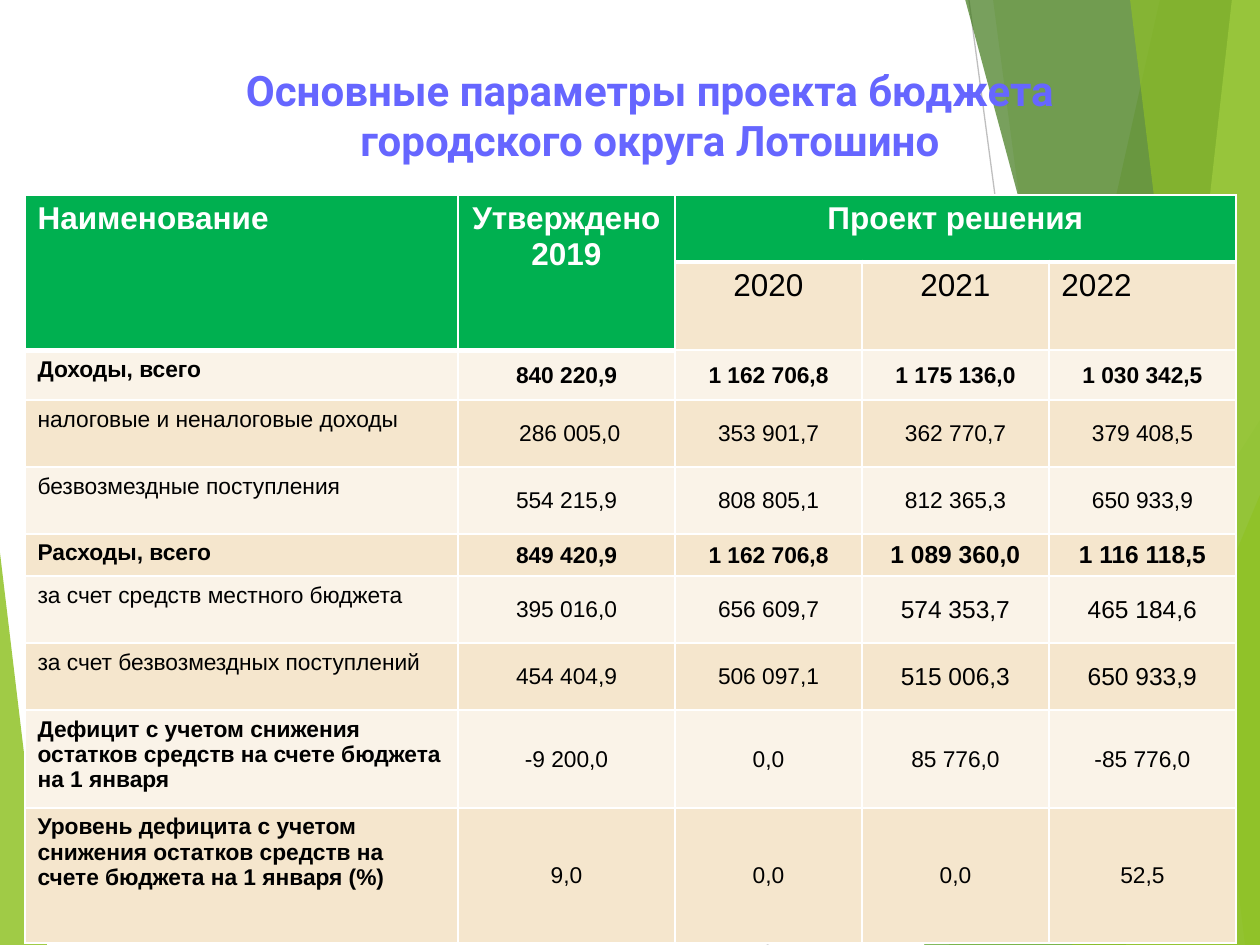
from collections import namedtuple
from dataclasses import dataclass

from lxml import etree
from pptx import Presentation
from pptx import util as u
from pptx.dml import color
from pptx.enum import shapes, text
from pptx.oxml import ns

PX = u.Inches(1) / 126
Box = namedtuple("Box", "left top width height")


@dataclass(frozen=True)
class Theme:
    title: str = "6666FF"
    header: str = "00B050"
    band_dark: str = "F5E6CD"
    band_light: str = "FAF3E8"
    white: str = "FFFFFF"
    black: str = "000000"
    lime: str = "90C226"
    green: str = "54A021"
    forest: str = "3F7819"
    pale: str = "C0E474"
    title_font: str = "Roboto"
    body_font: str = "Arial"
    title_size: int = 24
    header_size: int = 18
    body_size: int = 13
    large_size: int = 14


THEME = Theme()

BUDGET = [
    ("Доходы, всего", "840 220,9", "1 162 706,8", "1 175 136,0", "1 030 342,5"),
    ("налоговые и неналоговые доходы", " 286 005,0", "353 901,7", "362 770,7", "379 408,5"),
    ("безвозмездные поступления", "554 215,9", "808 805,1", "812 365,3", "650 933,9"),
    ("Расходы, всего", "849 420,9", "1 162 706,8", "1 089 360,0", "1 116 118,5"),
    ("за счет средств местного бюджета", "395 016,0", "656 609,7", "574 353,7", "465 184,6"),
    ("за счет безвозмездных поступлений", "454 404,9", "506 097,1", "515 006,3", "650 933,9"),
    ("Дефицит с учетом снижения остатков средств на счете бюджета на 1 января",
     "-9 200,0", "0,0", "85 776,0", "-85 776,0"),
    ("Уровень дефицита с учетом снижения остатков средств на счете бюджета на 1 января (%)",
     "9,0", "0,0", "0,0", "52,5"),
]
TOTAL_ROWS = {0, 3}
BOLD_LABEL_ROWS = TOTAL_ROWS | {6, 7}
EXPENSE_ROWS = {3, 4, 5}
COLUMN_WIDTHS = [433, 217, 187, 187, 187]
ROW_HEIGHTS = [67, 83, 50, 67, 67, 41, 67, 67, 98, 135]


def px(value):
    return u.Emu(round(value * PX))


def rgb(value):
    return color.RGBColor.from_string(value)


def paint(shape, fill, opacity):
    shape.shadow.inherit = False
    shape.line.fill.background()
    shape.fill.solid()
    shape.fill.fore_color.rgb = rgb(fill)
    tint = shape.fill._xPr.find(".//" + ns.qn("a:srgbClr"))
    etree.SubElement(tint, ns.qn("a:alpha"), val=str(opacity * 1000))


def add_facet(page, box, top_left, bottom_left, fill, opacity):
    right, bottom = box.left + box.width, box.top + box.height
    builder = page.shapes.build_freeform(box.left + top_left, box.top - 1, scale=PX)
    builder.add_line_segments(
        [(right, box.top - 1), (right, bottom), (box.left + bottom_left, bottom)])
    paint(builder.convert_to_shape(), fill, opacity)


def add_triangle(page, box, left, top, width, apex, fill, opacity):
    shape = page.shapes.add_shape(
        shapes.MSO_SHAPE.ISOSCELES_TRIANGLE, px(box.left + left), px(box.top + top),
        px(width), px(box.height - top))
    shape.adjustments[0] = apex
    paint(shape, fill, opacity)


def add_hairline(page, box, start, end, shade):
    line = page.shapes.add_connector(
        shapes.MSO_CONNECTOR.STRAIGHT, px(box.left + start[0]), px(box.top + start[1]),
        px(box.left + end[0]), px(box.top + end[1]))
    line.line.color.rgb = rgb(shade)
    line.line.width = u.Pt(0.75)
    etree.SubElement(line._element.spPr, ns.qn("a:effectLst"))


def add_backdrop(page, box):
    add_hairline(page, box, (969, 0), (1095, 945), "BFBFBF")
    add_hairline(page, box, (1260, 508), (767, 945), "D9D9D9")
    add_facet(page, box, 1160, 949, THEME.lime, 30)
    add_facet(page, box, 993, 1118, THEME.lime, 20)
    add_triangle(page, box, 924, 420, 336, 1, THEME.green, 72)
    add_facet(page, box, 965, 1220, THEME.forest, 70)
    add_facet(page, box, 1232, 1126, THEME.pale, 70)
    add_facet(page, box, 1130, 1245, THEME.lime, 65)
    add_triangle(page, box, 1072, 495, 188, 1, THEME.lime, 80)
    add_triangle(page, box, 0, 553, 47, 0, THEME.lime, 85)


def style(para, font, size, shade, bold, centred):
    para.font.name = font
    para.font.size = u.Pt(size)
    para.font.color.rgb = rgb(shade)
    para.font.bold = bold
    para.alignment = text.PP_ALIGN.CENTER if centred else text.PP_ALIGN.LEFT


def add_title(page, box):
    frame = page.shapes.add_textbox(*map(px, box)).text_frame
    frame.word_wrap = True
    frame.vertical_anchor = text.MSO_ANCHOR.MIDDLE
    para = frame.paragraphs[0]
    para.text = "Основные параметры проекта бюджета городского округа Лотошино"
    style(para, THEME.title_font, THEME.title_size, THEME.title, True, True)


def set_borders(cell, top, bottom):
    props = cell._tc.get_or_add_tcPr()
    edges = (("L", 1), ("R", 1), ("T", top), ("B", bottom))
    for index, (side, width) in enumerate(edges):
        edge = etree.Element(ns.qn(f"a:ln{side}"), w=str(u.Pt(width)))
        solid = etree.SubElement(edge, ns.qn("a:solidFill"))
        etree.SubElement(solid, ns.qn("a:srgbClr"), val=THEME.white)
        props.insert(index, edge)


def edge_below(row, column):
    return 3 if row == 0 or (row == 1 and column < 2) else 1


def fill_cell(cell, content, fill, size, shade, bold, centred, middle=False):
    cell.fill.solid()
    cell.fill.fore_color.rgb = rgb(fill)
    cell.vertical_anchor = text.MSO_ANCHOR.MIDDLE if middle else text.MSO_ANCHOR.TOP
    para = cell.text_frame.paragraphs[0]
    para.text = content
    style(para, THEME.body_font, size, shade, bold, centred)


def fill_header(table):
    for column, heading in enumerate(("Наименование", "Утверждено 2019", "Проект решения")):
        fill_cell(table.cell(0, column), heading, THEME.header, THEME.header_size,
                  THEME.white, True, column > 0)
    for column, year in enumerate(("2020", "2021", "2022"), start=2):
        fill_cell(table.cell(1, column), year, THEME.band_dark, THEME.header_size,
                  THEME.black, False, column < 4)
    table.cell(0, 0).merge(table.cell(1, 0))
    table.cell(0, 1).merge(table.cell(1, 1))
    table.cell(0, 2).merge(table.cell(0, 4))


def fill_body(table):
    for row, record in enumerate(BUDGET):
        band = THEME.band_dark if row % 2 else THEME.band_light
        for column, content in enumerate(record):
            large = row in EXPENSE_ROWS and column >= 3
            bold_rows = TOTAL_ROWS if column else BOLD_LABEL_ROWS
            fill_cell(table.cell(row + 2, column), content, band,
                      THEME.large_size if large else THEME.body_size,
                      THEME.black, row in bold_rows, column > 0, column > 0)


def add_budget_table(page, box):
    table = page.shapes.add_table(
        len(ROW_HEIGHTS), len(COLUMN_WIDTHS), *map(px, box)).table
    for column, width in zip(table.columns, COLUMN_WIDTHS):
        column.width = px(width)
    for row, height in zip(table.rows, ROW_HEIGHTS):
        row.height = px(height)
    fill_header(table)
    fill_body(table)
    for row in range(len(ROW_HEIGHTS)):
        for column in range(len(COLUMN_WIDTHS)):
            above = edge_below(row - 1, column) if row else 1
            set_borders(table.cell(row, column), above, edge_below(row, column))


def main():
    deck = Presentation()
    deck.slide_width, deck.slide_height = px(1260), px(945)
    page = deck.slides.add_slide(deck.slide_layouts[6])
    add_backdrop(page, Box(0, 0, 1260, 945))
    add_title(page, Box(164, 55, 972, 119))
    add_budget_table(page, Box(25, 195, sum(COLUMN_WIDTHS), sum(ROW_HEIGHTS)))
    deck.save("out.pptx")


if __name__ == "__main__":
    main()
